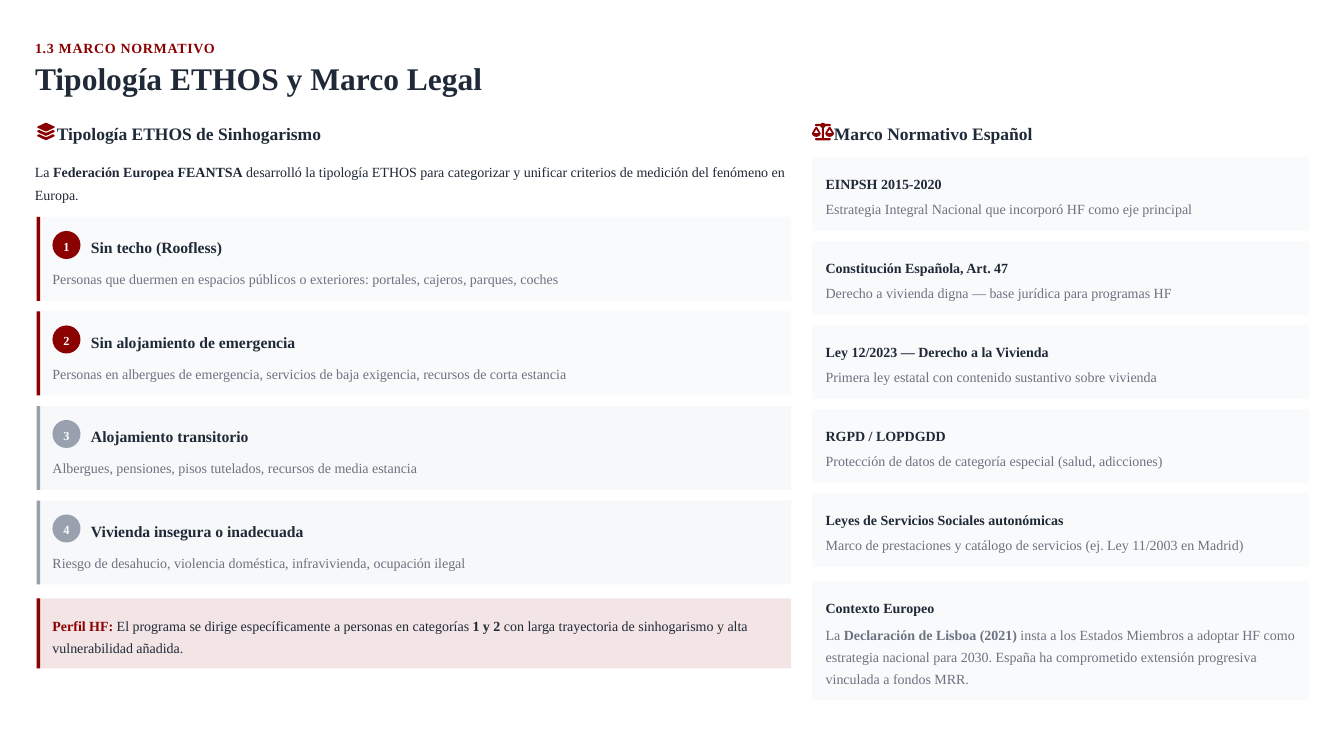
from typing import NamedTuple

from lxml import etree
from pptx import Presentation
from pptx.dml.color import RGBColor
from pptx.enum.shapes import MSO_SHAPE
from pptx.enum.text import MSO_ANCHOR, PP_ALIGN
from pptx.oxml.ns import qn
from pptx.util import Pt

RECT, OVAL = MSO_SHAPE.RECTANGLE, MSO_SHAPE.OVAL
MIDDLE, LEFT, CENTER = MSO_ANCHOR.MIDDLE, PP_ALIGN.LEFT, PP_ALIGN.CENTER
FONT = "Times New Roman"
COLORS = {
    "accent": "8B0000",
    "ink": "1F2937",
    "muted": "6B7280",
    "gray": "99A1AF",
    "card": "F9FAFB",
    "soft": "F3F4F6",
    "white": "FFFFFF",
}
Points = list[tuple[int, int]]


class Run(NamedTuple):
    text: str
    color: str = "ink"
    bold: bool = False


class Category(NamedTuple):
    title: str
    detail: str
    color: str
    fill: str
    alpha: int


class Law(NamedTuple):
    title: str
    detail: str


CATEGORIES = [
    Category("Sin techo (Roofless)",
             "Personas que duermen en espacios públicos o exteriores: portales, cajeros, parques, coches",
             "accent", "card", 100),
    Category("Sin alojamiento de emergencia",
             "Personas en albergues de emergencia, servicios de baja exigencia, recursos de corta estancia",
             "accent", "card", 100),
    Category("Alojamiento transitorio",
             "Albergues, pensiones, pisos tutelados, recursos de media estancia",
             "gray", "soft", 60),
    Category("Vivienda insegura o inadecuada",
             "Riesgo de desahucio, violencia doméstica, infravivienda, ocupación ilegal",
             "gray", "soft", 60),
]
LAWS = [
    Law("EINPSH 2015-2020", "Estrategia Integral Nacional que incorporó HF como eje principal"),
    Law("Constitución Española, Art. 47", "Derecho a vivienda digna — base jurídica para programas HF"),
    Law("Ley 12/2023 — Derecho a la Vivienda", "Primera ley estatal con contenido sustantivo sobre vivienda"),
    Law("RGPD / LOPDGDD", "Protección de datos de categoría especial (salud, adicciones)"),
    Law("Leyes de Servicios Sociales autonómicas",
        "Marco de prestaciones y catálogo de servicios (ej. Ley 11/2003 en Madrid)"),
]

# Icon outlines, in tenths of a point
LAYER_TOP = [(55, 2), (63, 0), (70, 2), (123, 27), (125, 31), (123, 35),
             (70, 60), (63, 62), (55, 60), (2, 35), (0, 31), (2, 27)]
LAYER_BAND = [(14, 51), (50, 68), (63, 71), (76, 68), (112, 51), (123, 56), (125, 62),
              (123, 66), (70, 91), (63, 93), (55, 91), (2, 66), (0, 62), (2, 56)]
SCALE_WIDTH = 157
SCALE_POST = [(78, 0), (70, 2), (62, 8), (31, 8), (24, 10), (23, 16), (24, 22), (31, 24), (59, 24),
              (63, 30), (71, 36), (71, 109), (31, 109), (24, 111), (23, 117), (24, 123), (31, 125)]
SCALE_PAN = [(31, 101), (16, 97), (4, 88), (0, 78), (1, 72), (24, 33),
             (31, 29), (38, 33), (61, 72), (62, 78), (58, 88), (46, 97)]
SCALE_HOLE = [(31, 46), (48, 74), (14, 74)]


def paint(sp, color: str, alpha: int = 100) -> None:
    sp.shadow.inherit = False
    sp.fill.solid()
    sp.fill.fore_color.rgb = RGBColor.from_string(COLORS[color])
    sp.line.fill.background()
    if alpha < 100:
        clr = sp.fill._xPr.find(".//" + qn("a:srgbClr"))
        etree.SubElement(clr, qn("a:alpha")).set("val", str(alpha * 1000))


def add_block(s, kind, x: float, y: float, w: float, h: float, color: str, alpha: int = 100):
    sp = s.shapes.add_shape(kind, Pt(x), Pt(y), Pt(w), Pt(h))
    paint(sp, color, alpha)
    return sp


def write(sp, runs: list[Run], size: float, spacing: float, align=LEFT, tracking: int = 0) -> None:
    """Fill a shape with one paragraph; tracking is in hundredths of a point."""
    tf = sp.text_frame
    frame = {"word_wrap": True, "vertical_anchor": MIDDLE, "margin_left": 0,
             "margin_right": 0, "margin_top": 0, "margin_bottom": 0}
    for name, value in frame.items():
        setattr(tf, name, value)
    p = tf.paragraphs[0]
    p.alignment, p.line_spacing = align, spacing
    for run in runs:
        r = p.add_run()
        r.text = run.text
        for name, value in {"name": FONT, "size": Pt(size), "bold": run.bold}.items():
            setattr(r.font, name, value)
        r.font.color.rgb = RGBColor.from_string(COLORS[run.color])
        if tracking:
            r._r.get_or_add_rPr().set("spc", str(tracking))


def add_text(s, x: float, y: float, w: float, h: float, runs: list[Run],
             size: float = 10, spacing: float = 1.3, tracking: int = 0) -> None:
    write(s.shapes.add_textbox(Pt(x), Pt(y), Pt(w), Pt(h)), runs, size, spacing, tracking=tracking)


def add_icon(s, x: float, y: float, outlines: list[Points]) -> None:
    start = outlines[0][0]
    builder = s.shapes.build_freeform(*start, scale=Pt(0.1))
    for outline in outlines:
        builder.move_to(*outline[0])
        builder.add_line_segments(outline[1:], close=True)
    paint(builder.convert_to_shape(Pt(x), Pt(y)), "accent")


def mirror(outline: Points) -> Points:
    return [(SCALE_WIDTH - x, y) for x, y in outline]


def add_barred_card(s, y: float, h: float, bar: str, fill: str, alpha: int) -> None:
    add_block(s, RECT, 26.2, y, 539, h, fill, alpha)
    add_block(s, RECT, 26.2, y, 2.5, h, bar)


def add_category(s, number: int, y: float, item: Category) -> None:
    add_barred_card(s, y, 60, item.color, item.fill, item.alpha)
    badge = add_block(s, OVAL, 37.5, y + 10, 20, 20, item.color)
    write(badge, [Run(str(number), "white", True)], 8.8, 1.2, CENTER)
    add_text(s, 65, y + 11.2, 480, 17.3, [Run(item.title, bold=True)], 11.2)
    add_text(s, 37.5, y + 35.2, 523, 15.1, [Run(item.detail, "muted")])


def add_law_card(s, y: float, h: float, title: str) -> None:
    add_block(s, RECT, 580, y, 355, h, "card")
    add_text(s, 589.8, y + 9.9, 340, 15.1, [Run(title, bold=True)])


def main() -> None:
    prs = Presentation()
    prs.slide_width, prs.slide_height = Pt(960), Pt(540)
    s = prs.slides.add_slide(prs.slide_layouts[6])

    add_text(s, 25, 25.2, 915, 15.1, [Run("1.3 MARCO NORMATIVO", "accent", True)], tracking=50)
    add_text(s, 25, 44.6, 921, 25.2, [Run("Tipología ETHOS y Marco Legal", bold=True)], 22.5, 0.9)

    band_below = [(x, y + 31) for x, y in LAYER_BAND]
    add_icon(s, 26.6, 87.7, [LAYER_TOP, LAYER_BAND, band_below])
    add_text(s, 40.6, 85, 530, 17.3, [Run("Tipología ETHOS de Sinhogarismo", bold=True)], 12.5, 1.2)
    add_text(s, 25, 112.3, 545, 32.4, [
        Run("La "), Run("Federación Europea FEANTSA", bold=True),
        Run(" desarrolló la tipología ETHOS para categorizar y unificar criterios"
            " de medición del fenómeno en Europa.")], spacing=1.4)
    for i, item in enumerate(CATEGORIES):
        add_category(s, i + 1, 155 + 67.5 * i, item)

    add_barred_card(s, 427.5, 50, "accent", "accent", 10)
    add_text(s, 37.5, 437.8, 523, 30.2, [
        Run("Perfil HF:", "accent", True),
        Run(" El programa se dirige específicamente a personas en categorías "),
        Run("1 y 2", bold=True),
        Run(" con larga trayectoria de sinhogarismo y alta vulnerabilidad añadida.")])

    half = SCALE_POST + mirror(SCALE_POST)[:0:-1]
    pans = [SCALE_PAN, SCALE_HOLE, mirror(SCALE_PAN), mirror(SCALE_HOLE)]
    add_icon(s, 580, 87.7, [half, *pans])
    add_text(s, 595.6, 85, 345, 17.3, [Run("Marco Normativo Español", bold=True)], 12.5, 1.2)
    for i, law in enumerate(LAWS):
        y = 112.4 + 60 * i
        add_law_card(s, y, 52.5, law.title)
        add_text(s, 589.8, y + 27.4, 340, 15.1, [Run(law.detail, "muted")])

    add_law_card(s, 415, 85, "Contexto Europeo")
    add_text(s, 589.8, 445, 340, 44.6, [
        Run("La ", "muted"), Run("Declaración de Lisboa (2021)", "muted", True),
        Run(" insta a los Estados Miembros a adoptar HF como estrategia nacional para 2030."
            " España ha comprometido extensión progresiva vinculada a fondos MRR.", "muted")])
    prs.save("out.pptx")


if __name__ == "__main__":
    main()
